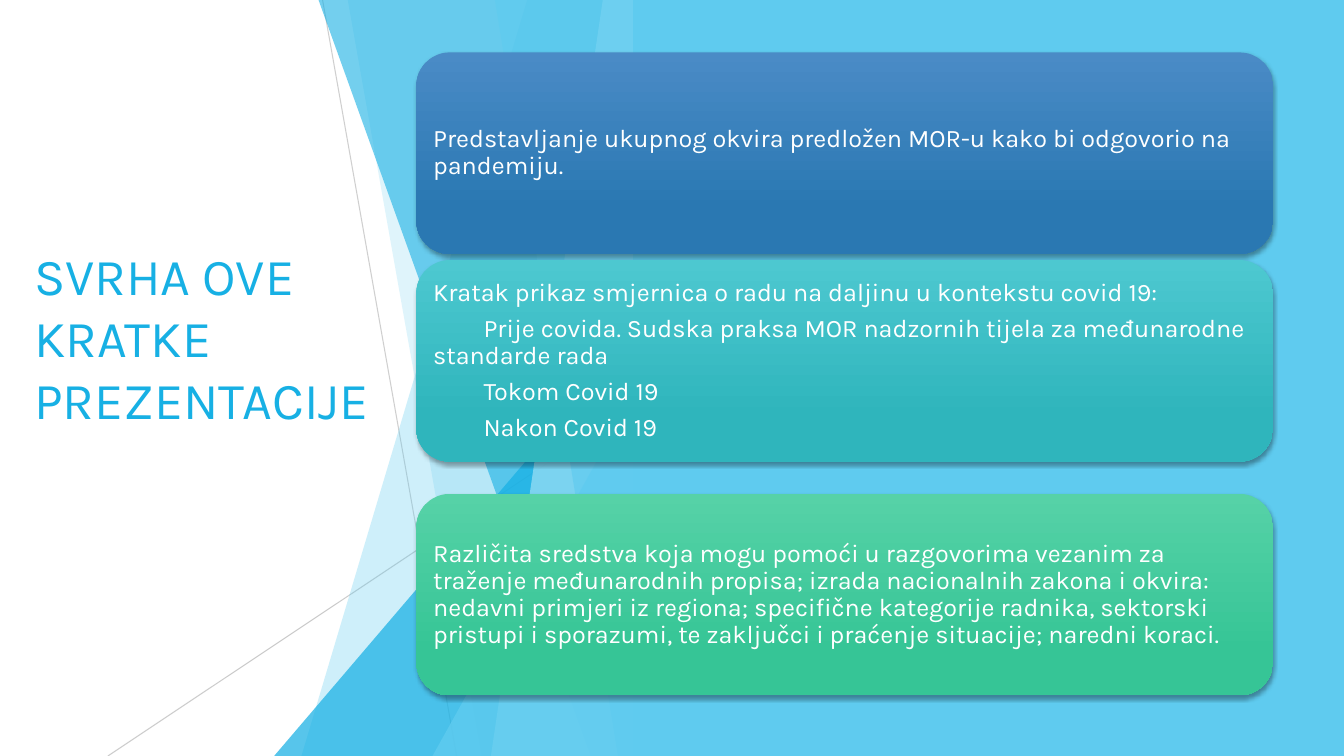
from dataclasses import dataclass

from lxml import etree
from pptx import Presentation
from pptx.dml.color import RGBColor
from pptx.enum.shapes import MSO_CONNECTOR, MSO_SHAPE
from pptx.enum.text import MSO_ANCHOR, MSO_AUTO_SIZE, PP_ALIGN
from pptx.oxml.ns import qn
from pptx.util import Inches, Pt

STRAIGHT = MSO_CONNECTOR.STRAIGHT
RECTANGLE = MSO_SHAPE.RECTANGLE
ROUNDED = MSO_SHAPE.ROUNDED_RECTANGLE
TRIANGLE = MSO_SHAPE.ISOSCELES_TRIANGLE
MIDDLE = MSO_ANCHOR.MIDDLE
LEFT = PP_ALIGN.LEFT
NO_AUTOFIT = MSO_AUTO_SIZE.NONE
TITLE_ONLY = 5

# The grid has square cells of a tenth of an inch
CELL = Inches(0.1)
COLUMNS, ROWS = 133.33, 75


@dataclass(frozen=True)
class Theme:
    font: str = "Karla"
    title_size: int = 37
    body_size: int = 18
    white: str = "FFFFFF"
    accent: str = "17B0E4"
    sky: str = "5FCBEF"
    pale: str = "9FE0F5"
    hairline: str = "BFBFBF"
    shadow: str = "000000"
    blue: tuple = ("4A8BC6", "2A78B2")
    teal: tuple = ("4DC8D0", "2FB5BC")
    green: tuple = ("56D2A7", "36C596")


@dataclass(frozen=True)
class Box:
    left: float
    top: float
    width: float
    height: float

    def inner(self, column, row, width, height):
        return Box(self.left + column, self.top + row, width, height)

    def point(self, column, row):
        return cells(self.left + column), cells(self.top + row)

    def place(self):
        return [cells(n) for n in (self.left, self.top, self.width, self.height)]


THEME = Theme()
TITLE_BOX = Box(2.4, 11, 35.9, 44.8)
FACET_BOX = Box(27.2, 0, 35.6, ROWS)
PANEL_BOX = Box(62.8, 0, COLUMNS - 62.8, ROWS)
CARD_BOX = Box(41.3, 5.2, 85, 63.8)
CARD_HEIGHT = 20

TITLE = "SVRHA OVE KRATKE PREZENTACIJE"

# Hairlines: start and end point, opacity
HAIRLINES = [((4.8, 0), (18.1, 75), 75), ((35.6, 40.3), (-16.5, 75), 80)]

# Slanted facets: left edge at the top and at the bottom, colour, opacity.
# Triangles: left edge, top row, colour, opacity.
FACETS = [
    ("slant", 25.1, 2.7, THEME.sky, 30),
    ("slant", 7.3, 20.6, THEME.sky, 20),
    ("triangle", 0, 33.3, THEME.accent, 72),
    ("slant", 4.4, 31.4, THEME.accent, 60),
    ("slant", 32.6, 21.5, THEME.pale, 70),
    ("slant", 21.9, 34.1, THEME.sky, 65),
    ("triangle", 15.7, 39.3, THEME.sky, 80),
]

# Cards: row inside the card area, gradient, paragraphs
CARDS = [
    (0, THEME.blue, [
        "Predstavljanje ukupnog okvira predložen MOR-u kako bi odgovorio na pandemiju."]),
    (20.6, THEME.teal, [
        "Kratak prikaz smjernica o radu na daljinu u kontekstu covid 19:",
        "\tPrije covida. Sudska praksa MOR nadzornih tijela za međunarodne standarde rada",
        "\tTokom Covid 19",
        "\tNakon Covid 19"]),
    (43.8, THEME.green, [
        "Različita sredstva koja mogu pomoći u razgovorima vezanim za traženje "
        "međunarodnih propisa; izrada nacionalnih zakona i okvira: nedavni primjeri "
        "iz regiona; specifične kategorije radnika, sektorski pristupi i sporazumi, "
        "te zaključci i praćenje situacije; naredni koraci."]),
]


def cells(count):
    return round(count * CELL)


def apply(target, formats):
    for name, value in formats.items():
        setattr(target, name, value)


def format_font(font, size, color):
    apply(font, {"name": THEME.font, "size": Pt(size)})
    font.color.rgb = RGBColor.from_string(color)


def paint(fill, color, opacity=100):
    fill.solid()
    fill.fore_color.rgb = RGBColor.from_string(color)
    if opacity < 100:
        set_opacity(fill.fore_color, fill, opacity)


def set_opacity(color, fill, opacity):
    element = fill._xPr.find(qn("a:solidFill")).find(qn("a:srgbClr"))
    etree.SubElement(element, qn("a:alpha"), val=str(opacity * 1000))


def clear_frame(shape):
    shape.shadow.inherit = False
    shape.line.fill.background()


def add_title(slide, box):
    title = slide.shapes.title
    apply(title, dict(zip(("left", "top", "width", "height"), box.place())))
    frame = title.text_frame
    frame.text = TITLE
    apply(frame, {"word_wrap": True, "auto_size": NO_AUTOFIT, "vertical_anchor": MIDDLE})
    paragraph = frame.paragraphs[0]
    paragraph.alignment = LEFT
    format_font(paragraph.runs[0].font, THEME.title_size, THEME.accent)


def add_hairlines(slide, box):
    for start, end, opacity in HAIRLINES:
        line = slide.shapes.add_connector(STRAIGHT, *box.point(*start), *box.point(*end))
        line.line.width = Pt(0.75)
        paint(line.line.fill, THEME.hairline, opacity)
        etree.SubElement(line._element.spPr, qn("a:effectLst"))


def add_facets(slide, box):
    for kind, left, second, color, opacity in FACETS:
        if kind == "triangle":
            area = box.inner(left, second, box.width - left, box.height - second)
            shape = slide.shapes.add_shape(TRIANGLE, *area.place())
            shape.adjustments[0] = 1
        else:
            builder = slide.shapes.build_freeform(*box.point(left, 0))
            builder.add_line_segments([
                box.point(box.width, 0),
                box.point(box.width, box.height),
                box.point(second, box.height)])
            shape = builder.convert_to_shape()
        clear_frame(shape)
        paint(shape.fill, color, opacity)


def add_panel(slide, box):
    panel = slide.shapes.add_shape(RECTANGLE, *box.place())
    clear_frame(panel)
    paint(panel.fill, THEME.sky)


def add_soft_shadow(shape):
    effects = shape._element.spPr.find(qn("a:effectLst"))
    shadow = etree.SubElement(effects, qn("a:outerShdw"), blurRad=str(Pt(3)),
                              dist=str(Pt(2)), dir="5400000", rotWithShape="0")
    color = etree.SubElement(shadow, qn("a:srgbClr"), val=THEME.shadow)
    etree.SubElement(color, qn("a:alpha"), val="35000")


def add_card(slide, box, gradient, texts):
    card = slide.shapes.add_shape(ROUNDED, *box.place())
    clear_frame(card)
    add_soft_shadow(card)
    card.fill.gradient()
    card.fill.gradient_angle = 270
    for stop, position, color in zip(card.fill.gradient_stops, (0, 0.78), gradient):
        stop.position = position
        stop.color.rgb = RGBColor.from_string(color)

    frame = card.text_frame
    apply(frame, {"word_wrap": True, "vertical_anchor": MIDDLE})
    apply(frame, {f"margin_{side}": Inches(0.07) for side in ("left", "top", "right", "bottom")})
    for index, text in enumerate(texts):
        paragraph = frame.add_paragraph() if index else frame.paragraphs[0]
        apply(paragraph, {"alignment": LEFT, "line_spacing": 0.9, "space_after": Pt(6.3)})
        run = paragraph.add_run()
        run.text = text
        format_font(run.font, THEME.body_size, THEME.white)


def add_cards(slide, box):
    for row, gradient, texts in CARDS:
        add_card(slide, box.inner(0, row, box.width, CARD_HEIGHT), gradient, texts)


def main():
    presentation = Presentation()
    apply(presentation, {"slide_width": cells(COLUMNS), "slide_height": cells(ROWS)})
    slide = presentation.slides.add_slide(presentation.slide_layouts[TITLE_ONLY])
    add_hairlines(slide, FACET_BOX)
    add_facets(slide, FACET_BOX)
    add_title(slide, TITLE_BOX)
    add_panel(slide, PANEL_BOX)
    add_cards(slide, CARD_BOX)
    presentation.save("out.pptx")


if __name__ == "__main__":
    main()
